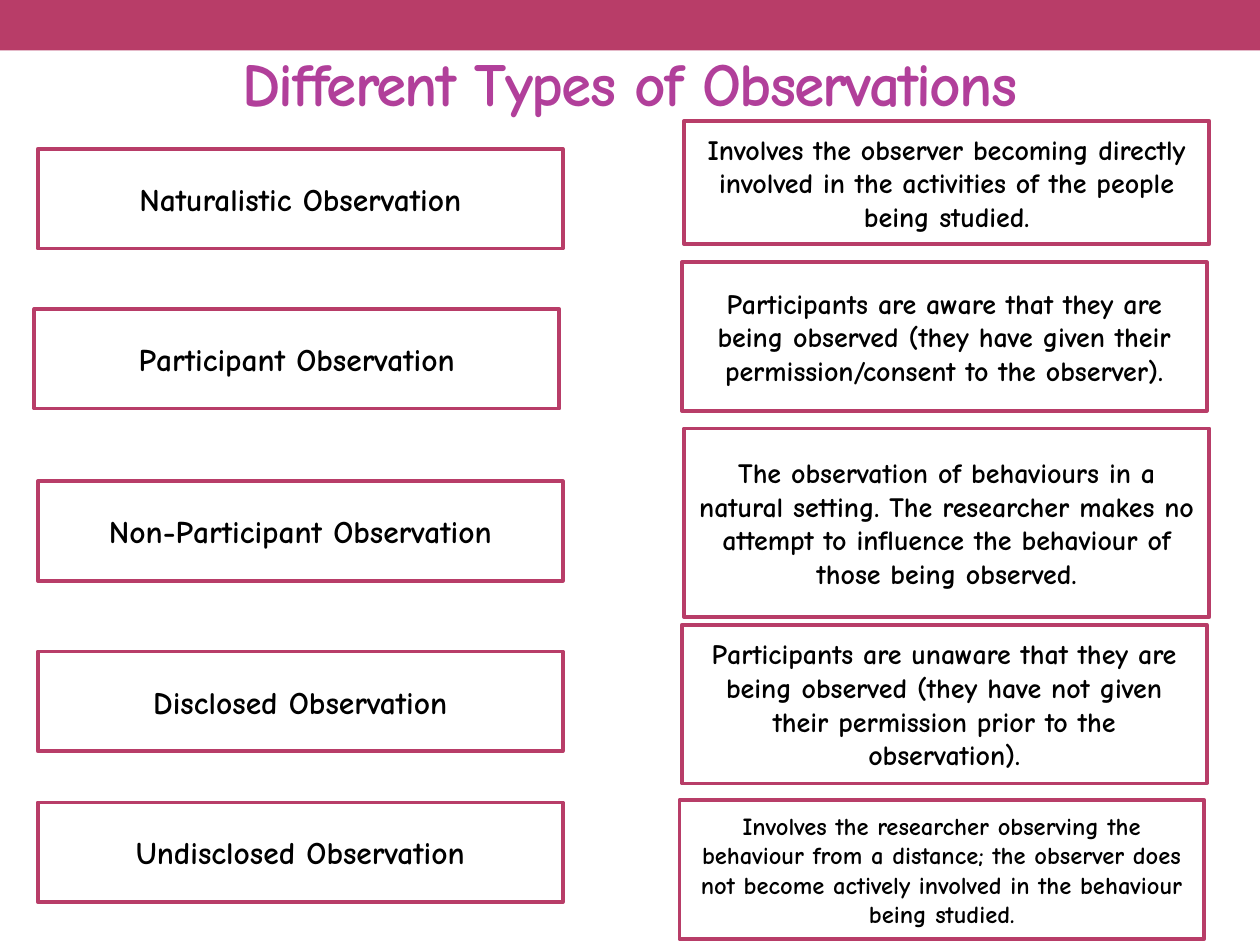
from pptx import Presentation
from pptx.dml.color import RGBColor
from pptx.enum.shapes import MSO_SHAPE
from pptx.enum.text import MSO_ANCHOR, MSO_AUTO_SIZE, PP_ALIGN
from pptx.util import Pt

RECT = MSO_SHAPE.RECTANGLE
MIDDLE = MSO_ANCHOR.MIDDLE
NO_AUTOFIT = MSO_AUTO_SIZE.NONE
CENTER = PP_ALIGN.CENTER

ROSE = RGBColor(0xB8, 0x3D, 0x68)
PURPLE = RGBColor(0xB1, 0x3F, 0x9A)
WHITE = RGBColor(0xFF, 0xFF, 0xFF)
BLACK = RGBColor(0x00, 0x00, 0x00)
FONT = "Comic Neue"

CARD_WIDTH = 300
TERM_HEIGHT = 57

# left, top, text
TERMS = [
    (21.6, 85, "Naturalistic Observation"),
    (19.6, 176.5, "Participant Observation"),
    (21.6, 275, "Non-Participant Observation"),
    (21.6, 372.3, "Disclosed Observation"),
    (21.6, 458.5, "Undisclosed Observation"),
]

# left, top, height, text size, text
DEFINITIONS = [
    (391, 69, 70.6, 16,
     "Involves the observer becoming directly involved in the activities "
     "of the people being studied."),
    (389.6, 357, 90.7, 16,
     "Participants are unaware that they are being observed (they have not "
     "given their permission prior to the observation)."),
    (391, 244.8, 108, 16,
     "The observation of behaviours in a natural setting. The researcher makes "
     "no attempt to influence the behaviour of those being observed."),
    (389.6, 149.8, 85, 16,
     "Participants are aware that they are being observed (they have given "
     "their permission/consent to the observer)."),
    (388.2, 457.2, 79.4, 14,
     "Involves the researcher observing the behaviour from a distance; the "
     "observer does not become actively involved in the behaviour being studied."),
]


def set_text(sp, text, size, color):
    tf = sp.text_frame
    tf.word_wrap = True
    tf.auto_size = NO_AUTOFIT
    tf.vertical_anchor = MIDDLE
    p = tf.paragraphs[0]
    p.text = text
    p.alignment = CENTER
    p.font.name = FONT
    p.font.size = Pt(size)
    p.font.bold = True
    p.font.color.rgb = color


def add_card(left, top, height, size, text):
    """Add a white box with a rose outline and centred text."""
    sp = s.shapes.add_shape(RECT, Pt(left), Pt(top), Pt(CARD_WIDTH), Pt(height))
    sp.shadow.inherit = False
    sp.fill.solid()
    sp.fill.fore_color.rgb = WHITE
    sp.line.color.rgb = ROSE
    sp.line.width = Pt(2.08)
    set_text(sp, text, size, BLACK)


prs = Presentation()
prs.slide_width, prs.slide_height = Pt(720), Pt(540)
s = prs.slides.add_slide(prs.slide_layouts[5])

band = s.shapes.add_shape(RECT, 0, 0, prs.slide_width, Pt(28.8))
band.shadow.inherit = False
band.fill.solid()
band.fill.fore_color.rgb = ROSE
band.line.fill.background()

title = s.shapes.title
title.left, title.top, title.width, title.height = Pt(36), Pt(21.6), Pt(648), Pt(50)
set_text(title, "Different Types of Observations", 35, PURPLE)
title.text_frame.paragraphs[0].runs[0]._r.get_or_add_rPr().set("spc", "-100")
band._element.addnext(title._element)  # keeps the title in front of the band

for left, top, text in TERMS:
    add_card(left, top, TERM_HEIGHT, 18, text)

for left, top, height, size, text in DEFINITIONS:
    add_card(left, top, height, size, text)

prs.save("out.pptx")
